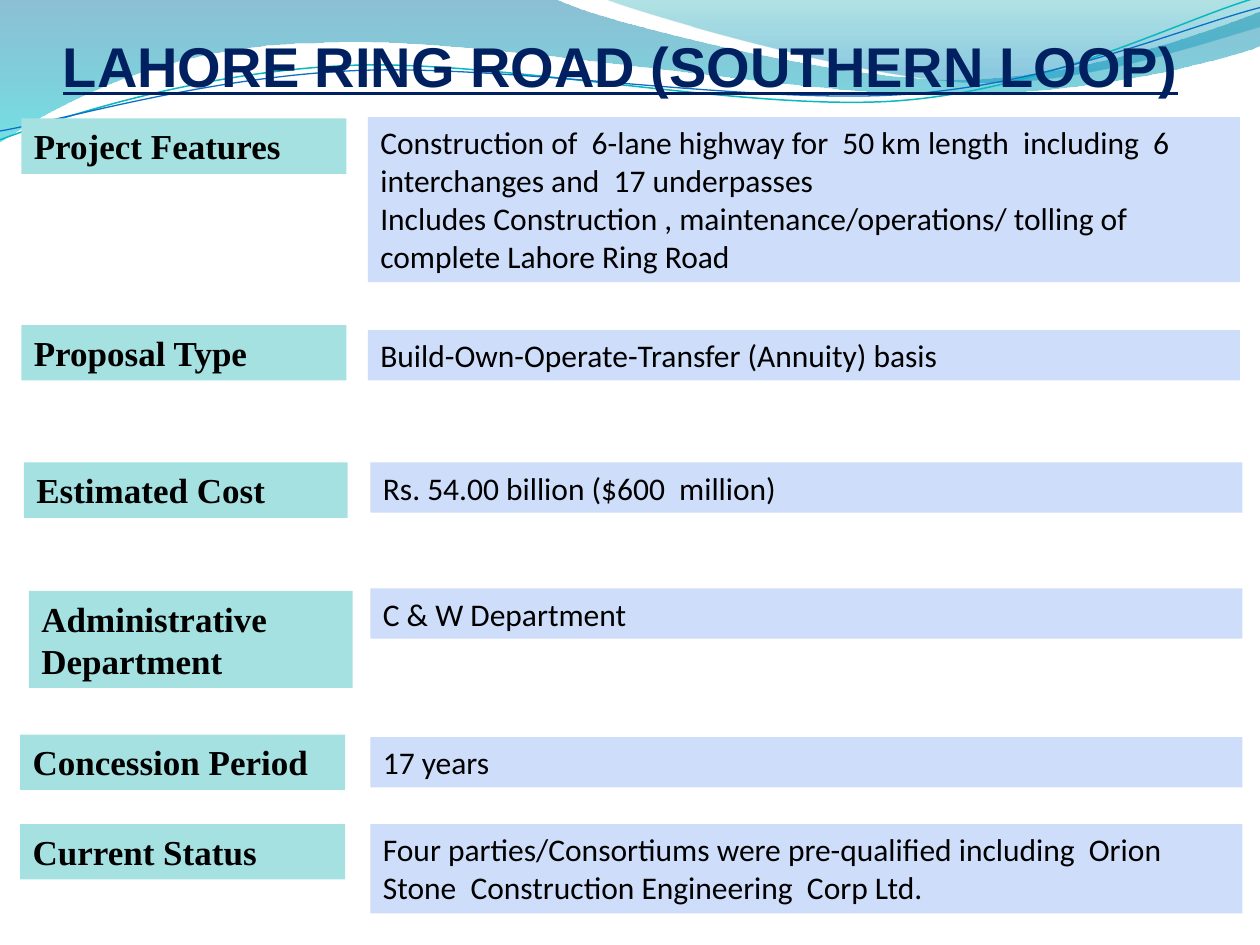
"""Build the Lahore Ring Road project summary slide."""
from math import cos, radians, sin
from typing import NamedTuple, Optional

from lxml.etree import SubElement
from pptx import Presentation
from pptx.dml.color import RGBColor
from pptx.enum.shapes import MSO_SHAPE as Preset
from pptx.enum.text import MSO_ANCHOR as Anchor, PP_ALIGN as Align
from pptx.oxml.ns import qn
from pptx.util import Inches, Pt

COLORS = {
    "title": "002060", "text": "000000", "label": "A6E1E2", "detail": "CEDDFA",
    "deep": "0074A1", "cyan": "00C6CF", "teal": "00A1A9", "azure": "008BBF",
    "aqua_line": "0AB8BF", "blue_line": "0F6FC6",
}


class Box(NamedTuple):
    left: float
    top: float
    width: float
    height: float


class Stop(NamedTuple):
    position: float
    color: str
    opacity: int


class Wave(NamedTuple):
    box: Box
    start: tuple
    segments: list
    stops: tuple = ()
    line: Optional[str] = None
    weight: float = 0
    rotation: float = 0


class TextStyle(NamedTuple):
    font: str
    size: int
    color: str
    bold: bool = False
    underline: bool = False


class Row(NamedTuple):
    label: str
    label_box: Box
    detail: str
    detail_box: Box


TITLE_STYLE = TextStyle("Arial", 32, "title", True, True)
LABEL_STYLE = TextStyle("Times New Roman", 20, "text", True)
DETAIL_STYLE = TextStyle("Calibri", 18, "text")

WAVES = [
    Wave(Box(-0.01, -0.01, 10.02, 1.14), (0, -0.01), [
        (4.4, -0.01),
        (4.76, 0.17, 6.64, 0.63, 7.58, 0.63),
        (8.53, 0.63, 9.58, 0.26, 10, 0.09),
        (10.01, 0.36),
        (9.83, 0.44, 8.7, 0.76, 7.46, 0.75),
        (6.22, 0.75, 3.82, 0.28, 2.57, 0.34),
        (1.29, 0.35, 0.46, 0.83, -0.01, 1.13),
        (0, -0.01),
    ], (Stop(0, "deep", 45), Stop(1, "cyan", 55))),
    Wave(Box(4.79, -0.01, 5.21, 0.7), (4.79, -0.01), [
        (5.09, 0.11, 6.82, 0.62, 7.69, 0.65),
        (8.56, 0.69, 9.61, 0.32, 10, 0.21),
        (10, 0),
        (4.79, -0.01),
    ], (Stop(0, "teal", 30), Stop(0.8, "azure", 45))),
    Wave(Box(-0.02, 0.22, 10.02, 0.71), (0, 1.11), [
        (0.48, 0.93, 1.58, 0.57, 2.77, 0.52),
        (3.95, 0.47, 5.93, 0.89, 7.13, 0.8),
        (8.33, 0.71, 9.38, 0.15, 9.98, -0.02),
    ], line="aqua_line", weight=0.85, rotation=357.3),
    Wave(Box(-0.02, 0.3, 10.03, 0.58), (0, 1.04), [
        (0.47, 0.96, 1.64, 0.61, 2.83, 0.56),
        (4.03, 0.51, 5.97, 0.83, 7.17, 0.75),
        (8.36, 0.67, 9.41, 0.21, 10, 0.06),
    ], line="blue_line", weight=0.75, rotation=357.3),
]

ROWS = [
    Row("Project Features", Box(0.17, 0.94, 2.58, 0.44),
        "Construction of  6-lane highway for  50 km length  including  6 "
        "interchanges and  17 underpasses\n"
        "Includes Construction , maintenance/operations/ tolling of "
        "complete Lahore Ring Road", Box(2.92, 0.93, 6.92, 1.31)),
    Row("Proposal Type", Box(0.17, 2.58, 2.58, 0.44),
        "Build-Own-Operate-Transfer (Annuity) basis", Box(2.92, 2.62, 6.92, 0.4)),
    Row("Estimated Cost", Box(0.19, 3.67, 2.57, 0.44),
        "Rs. 54.00 billion ($600  million)", Box(2.94, 3.67, 6.92, 0.4)),
    Row("Administrative Department", Box(0.23, 4.69, 2.57, 0.77),
        "C & W Department", Box(2.94, 4.67, 6.92, 0.4)),
    Row("Concession Period", Box(0.16, 5.83, 2.58, 0.44),
        "17 years", Box(2.94, 5.85, 6.92, 0.4)),
    Row("Current Status", Box(0.16, 6.54, 2.58, 0.44),
        "Four parties/Consortiums were pre-qualified including  Orion "
        "Stone  Construction Engineering  Corp Ltd.", Box(2.94, 6.54, 6.92, 0.71)),
]


def rgb(name: str) -> RGBColor:
    return RGBColor.from_string(COLORS[name])


def inches(box: Box) -> list:
    return [Inches(length) for length in box]


def to_local(wave: Wave, x: float, y: float) -> tuple:
    box, angle = wave.box, radians(-wave.rotation)
    dx = x - box.left - box.width / 2
    dy = y - box.top - box.height / 2
    return (Inches(dx * cos(angle) - dy * sin(angle) + box.width / 2),
            Inches(dx * sin(angle) + dy * cos(angle) + box.height / 2))


def add_step(outline, tag: str, wave: Wave, numbers: tuple) -> None:
    step = SubElement(outline, qn(tag))
    for pair in zip(numbers[::2], numbers[1::2]):
        x, y = to_local(wave, *pair)
        SubElement(step, qn("a:pt"), x=str(int(x)), y=str(int(y)))


def add_ribbon(slide, wave: Wave):
    builder = slide.shapes.build_freeform(0, 0, scale=1.0)
    builder.add_line_segments([(Inches(wave.box.width), Inches(wave.box.height))])
    ribbon = builder.convert_to_shape()
    ribbon.left, ribbon.top, ribbon.width, ribbon.height = inches(wave.box)
    ribbon.rotation = wave.rotation
    outline = next(ribbon.element.iter(qn("a:path")))
    for step in list(outline):
        outline.remove(step)
    outline.set("w", str(int(ribbon.width)))
    outline.set("h", str(int(ribbon.height)))
    add_step(outline, "a:moveTo", wave, wave.start)
    for segment in wave.segments:
        add_step(outline, "a:lnTo" if len(segment) == 2 else "a:cubicBezTo", wave, segment)
    if wave.stops:
        SubElement(outline, qn("a:close"))
    return ribbon


def draw_wave(slide, wave: Wave) -> None:
    ribbon = add_ribbon(slide, wave)
    ribbon.shadow.inherit = False
    if wave.line:
        ribbon.fill.background()
        ribbon.line.color.rgb = rgb(wave.line)
        ribbon.line.width = Pt(wave.weight)
        return
    ribbon.line.fill.background()
    ribbon.fill.gradient()
    ribbon.fill.gradient_angle = 270
    for stop, values in zip(ribbon.fill.gradient_stops, wave.stops):
        stop.position = values.position
        stop.color.rgb = rgb(values.color)
    for tint, values in zip(ribbon.element.iter(qn("a:srgbClr")), wave.stops):
        SubElement(tint, qn("a:alpha"), val=str(values.opacity * 1000))


def write(frame, text: str, style: TextStyle) -> None:
    frame.word_wrap = True
    frame.text = text
    for paragraph in frame.paragraphs:
        paragraph.alignment = Align.LEFT
        for run in paragraph.runs:
            run.font.name = style.font
            run.font.size = Pt(style.size)
            run.font.bold = style.bold
            run.font.underline = style.underline
            run.font.color.rgb = rgb(style.color)


def draw_title(slide, text: str) -> None:
    frame = slide.shapes.add_textbox(*inches(Box(0.5, 0.08, 9, 0.7))).text_frame
    frame.margin_left = frame.margin_right = frame.margin_bottom = 0
    frame.vertical_anchor = Anchor.BOTTOM
    write(frame, text, TITLE_STYLE)


def draw_panel(slide, box: Box, text: str, fill: str, style: TextStyle) -> None:
    panel = slide.shapes.add_shape(Preset.RECTANGLE, *inches(box))
    panel.shadow.inherit = False
    panel.fill.solid()
    panel.fill.fore_color.rgb = rgb(fill)
    panel.line.fill.background()
    panel.text_frame.vertical_anchor = Anchor.TOP
    write(panel.text_frame, text, style)


def main() -> None:
    deck = Presentation()
    deck.slide_width, deck.slide_height = Inches(10), Inches(7.5)
    slide = deck.slides.add_slide(deck.slide_layouts[6])
    for wave in WAVES:
        draw_wave(slide, wave)
    draw_title(slide, "LAHORE RING ROAD (SOUTHERN LOOP)")
    for row in ROWS:
        draw_panel(slide, row.label_box, row.label, "label", LABEL_STYLE)
        draw_panel(slide, row.detail_box, row.detail, "detail", DETAIL_STYLE)
    deck.save("out.pptx")


if __name__ == "__main__":
    main()
